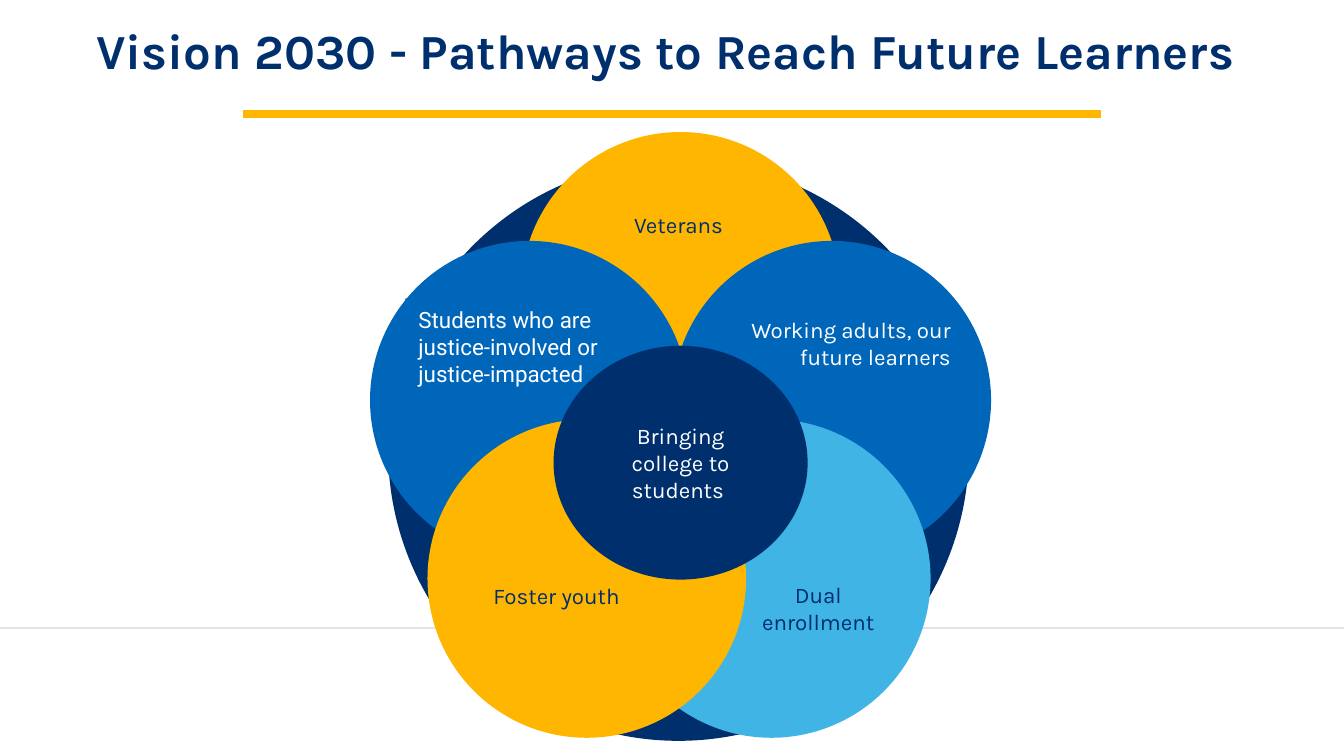
"""Build the Vision 2030 pathways slide with its five-petal diagram."""
import pptx
import pptx.dml.color
import pptx.enum.shapes
import pptx.enum.text
import pptx.oxml.ns
import pptx.util
from lxml import etree

Inches = pptx.util.Inches
ALIGN = pptx.enum.text.PP_ALIGN
ANCHOR = pptx.enum.text.MSO_ANCHOR
SHAPE = pptx.enum.shapes.MSO_SHAPE
NAVY, GOLD, BLUE, SKY, WHITE = "002F6D", "FFB600", "0066BA", "40B4E5", "FFFFFF"


def rgb(value):
    return pptx.dml.color.RGBColor.from_string(value)


def write(sp, text, color, align, size=16, name="Karla", bold=False, margins=(0.13,) * 4,
          anchor=ANCHOR.MIDDLE):
    tf = sp.text_frame
    left, top, right, bottom = (Inches(m) for m in margins)
    frame = {"word_wrap": True, "vertical_anchor": anchor, "margin_left": left,
             "margin_top": top, "margin_right": right, "margin_bottom": bottom}
    for key, value in frame.items():
        setattr(tf, key, value)
    p = tf.paragraphs[0]
    p.alignment = align
    r = p.add_run()
    r.text = text
    for key, value in {"size": pptx.util.Pt(size), "name": name, "bold": bold}.items():
        setattr(r.font, key, value)
    r.font.color.rgb = rgb(color)
    return p


prs = pptx.Presentation()
prs.slide_width, prs.slide_height = Inches(13.33), Inches(7.5)
s = prs.slides.add_slide(prs.slide_layouts[6])

rules = [(0, 13.33, 6.23, "E3E5E5", 1), (2.41, 10.92, 1.13, GOLD, 5.75)]
for x1, x2, y, color, width in rules:
    line = s.shapes.add_connector(pptx.enum.shapes.MSO_CONNECTOR.STRAIGHT,
                                  Inches(x1), Inches(y), Inches(x2), Inches(y))
    line.line.color.rgb = rgb(color)
    line.line.width = pptx.util.Pt(width)
    etree.SubElement(line._element.spPr, pptx.oxml.ns.qn("a:effectLst"))

title = s.shapes.add_textbox(0, 0, Inches(13.33), Inches(1.05))
p = write(title, "Vision 2030 - Pathways to Reach Future Learners ", NAVY, ALIGN.CENTER,
          size=35, bold=True, margins=(0.5, 0.27, 0.5, 0.05), anchor=ANCHOR.TOP)
p.line_spacing = 0.9

petal = 3.16
petals = [
    (5.17, 1.31, GOLD, (5.76, 1.75, 1.94, 0.96), "Veterans", NAVY, ALIGN.CENTER, "Karla"),
    (6.67, 2.39, BLUE, (6.94, 3.09, 2.62, 0.62), "Working adults, our future learners",
     WHITE, ALIGN.RIGHT, "Karla"),
    (6.07, 4.16, SKY, (7.22, 5.55, 1.79, 0.96), "Dual enrollment", NAVY, ALIGN.CENTER, "Karla"),
    (3.67, 2.39, BLUE, (4.02, 2.96, 2.18, 0.96),
     "Students who are justice-involved or justice-impacted", WHITE, ALIGN.LEFT, "Roboto"),
    (4.24, 4.16, GOLD, (4.55, 5.43, 1.94, 0.96), "Foster youth", NAVY, ALIGN.CENTER, "Karla"),
]
diagram = [(SHAPE.OVAL, (3.85, 1.59, 5.76, 5.76), NAVY, None)]
for x, y, fill, label_box, text, color, align, name in petals:
    diagram.append((SHAPE.OVAL, (x, y, petal, petal), fill, None))
    diagram.append((SHAPE.RECTANGLE, label_box, fill, (text, color, align, 16, name)))
diagram.append((SHAPE.OVAL, (5.49, 3.43, 2.52, 2.32), NAVY,
                ("Bringing college to students ", WHITE, ALIGN.CENTER)))

for kind, box, fill, label in diagram:
    sp = s.shapes.add_shape(kind, *(Inches(v) for v in box))
    sp.shadow.inherit = False
    sp.fill.solid()
    sp.fill.fore_color.rgb = rgb(fill)
    sp.line.fill.background()
    if label:
        write(sp, *label)

prs.save("out.pptx")
